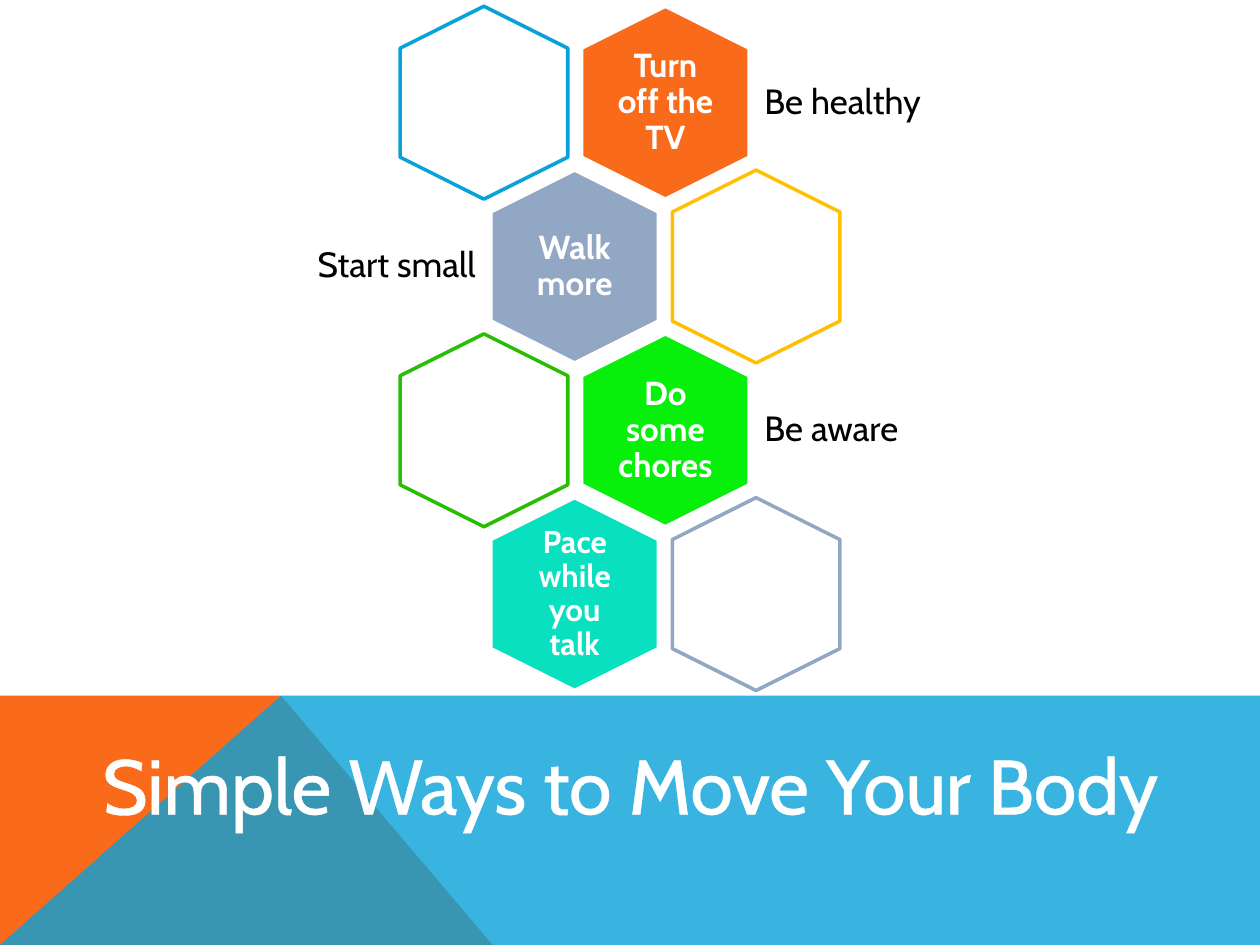
from lxml import etree
from pptx import Presentation
from pptx.dml.color import RGBColor as RGB
from pptx.enum.shapes import MSO_SHAPE as SHAPE
from pptx.enum.text import MSO_ANCHOR as ANCHOR, MSO_AUTO_SIZE as AUTO, PP_ALIGN as ALIGN
from pptx.oxml import parse_xml
from pptx.oxml.ns import nsdecls, qn
from pptx.util import Pt

COLORS = {
    "white": "FFFFFF", "black": "000000", "orange": "F96A1B", "blue": "08A1D9",
    "slate": "91A7C4", "gold": "FFC000", "lime": "08EF0C", "green": "29BE06",
    "teal": "08E0C0",
}
FONT = "Cabin"
HEX_W, HEX_H = 110.2, 95.8      # before the quarter turn
COL_GAP, ROW_GAP = 103.7, 93.6
LABEL_W, LABEL_H = 66.2, 75.6
CAPTION_H = 66.2

# label, label size, fill, outline of the empty hexagon, caption, caption width
ROWS = [
    ("Turn off the TV", 19, "orange", "blue", "Be healthy", 123.1),
    ("Walk more", 19, "slate", "gold", "Start small", 118.8),
    ("Do some chores", 19, "lime", "green", "Be aware", 123.1),
    ("Pace while you talk", 18, "teal", "slate", None, 0),
]


def rgb(name):
    return RGB.from_string(COLORS[name])


def write(tf, text, align, color, **font):
    p = tf.paragraphs[0]
    p.alignment = align
    r = p.add_run()
    r.text = text
    r.font.color.rgb = rgb(color)
    for name, value in {"name": FONT, **font}.items():
        setattr(r.font, name, value)
    return p, r


def add_label(s, box, text, align, color, inset, **font):
    tf = s.shapes.add_textbox(*map(Pt, box)).text_frame
    tf.word_wrap = True
    tf.vertical_anchor = ANCHOR.MIDDLE
    for side in ("left", "top", "right", "bottom"):
        setattr(tf, f"margin_{side}", Pt(inset))
    p, _ = write(tf, text, align, color, **font)
    p.line_spacing = 0.9


def add_hexagon(s, cx, cy, fill, line):
    sp = s.shapes.add_shape(SHAPE.HEXAGON, Pt(cx - HEX_W / 2), Pt(cy - HEX_H / 2),
                            Pt(HEX_W), Pt(HEX_H))
    sp.rotation = 90
    sp.adjustments[0] = 0.25
    sp.shadow.inherit = False
    sp.fill.solid()
    sp.fill.fore_color.rgb = rgb(fill)
    sp.line.color.rgb = rgb(line)
    sp.line.width = Pt(2)


def add_polygon(s, points, color, alpha=None):
    start, *rest = [(Pt(x), Pt(y)) for x, y in points]
    builder = s.shapes.build_freeform(*start)
    builder.add_line_segments(rest, close=True)
    sp = builder.convert_to_shape()
    sp.shadow.inherit = False
    sp.line.fill.background()
    sp.fill.solid()
    sp.fill.fore_color.rgb = rgb(color)
    if alpha:
        clr = sp.element.spPr.find(".//" + qn("a:srgbClr"))
        etree.SubElement(clr, qn("a:alpha")).set("val", str(alpha * 1000))


def add_title_band(s, x, y, w, h):
    """Two overlapping colour wedges with the title on top."""
    peak, foot, bottom = x + 160.6, x + 281.5, y + h
    add_polygon(s, [(x, bottom), (x, y), (peak, y), (foot, bottom)], "orange")
    add_polygon(s, [(x, bottom), (peak, y), (x + w, y), (x + w, bottom)], "blue", 80)

    title = s.shapes.title
    title.element.getparent().append(title.element)
    box = (x + 43.9, y + 20.2, 632.9, 60.5)
    for name, value in zip(("left", "top", "width", "height"), box):
        setattr(title, name, Pt(value))
    tf = title.text_frame
    tf.word_wrap = True
    tf.vertical_anchor = ANCHOR.TOP
    tf.auto_size = AUTO.SHAPE_TO_FIT_TEXT
    _, r = write(tf, "Simple Ways to Move Your Body", ALIGN.CENTER, "white", size=Pt(44))
    outline = parse_xml(f'<a:ln {nsdecls("a")} w="{Pt(1.45)}"><a:solidFill>'
                        f'<a:srgbClr val="{COLORS["white"]}"/></a:solidFill></a:ln>')
    r.font.fill  # the run properties exist from here on
    r._r.get_or_add_rPr().insert(0, outline)


def add_honeycomb(s, cx, top):
    """Staggered pairs of hexagons; the captioned side alternates."""
    for i, (text, size, fill, outline, caption, width) in enumerate(ROWS):
        side = -1 if i % 2 else 1    # side on which the caption stands
        x = cx + (COL_GAP / 4 * side)
        y = top + HEX_W / 2 + i * ROW_GAP
        add_hexagon(s, x, y, fill, "white")
        add_label(s, (x - LABEL_W / 2, y - LABEL_H / 2, LABEL_W, LABEL_H), text,
                  ALIGN.CENTER, "white", 5.7 if size == 19 else 5.3,
                  size=Pt(size), bold=True)
        if caption:
            edge = x + side * 51
            left = edge if side > 0 else edge - width
            add_label(s, (left, y - CAPTION_H / 2, width, CAPTION_H), caption,
                      ALIGN.LEFT if side > 0 else ALIGN.RIGHT, "black", 5.5,
                      size=Pt(20))
        add_hexagon(s, x - side * COL_GAP, y, "white", outline)


def main():
    prs = Presentation()
    prs.slide_width, prs.slide_height = Pt(720), Pt(540)
    s = prs.slides.add_slide(prs.slide_layouts[5])
    add_title_band(s, 0, 397.6, 720, 142.4)
    add_honeycomb(s, 354.3, 3.6)
    prs.save("out.pptx")


if __name__ == "__main__":
    main()
